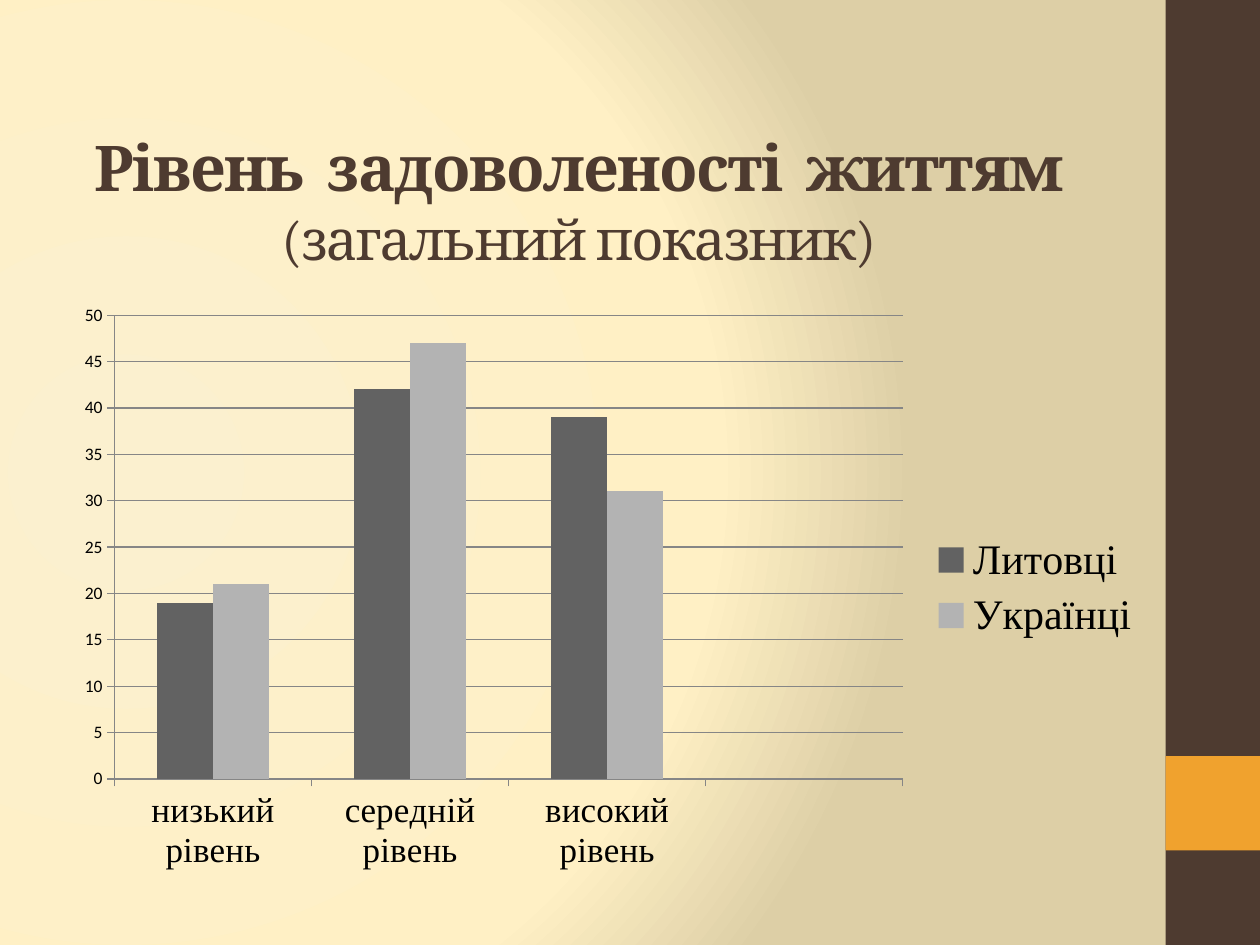
import lxml.etree
import pptx
import pptx.chart.data
import pptx.dml.color
import pptx.enum.chart
import pptx.enum.shapes
import pptx.enum.text
import pptx.oxml.ns
import pptx.util
from pptx.util import Inches

COLORS = {
    "brown": "4E3B30",
    "orange": "F0A22E",
    "dark_bar": "626262",
    "light_bar": "B3B3B3",
    "axis": "868686",
    "text": "000000",
}
BACKGROUND_STOPS = [(0, "FBF0CF"), (75, "FFF0C5"), (100, "DDCFA6")]
BACKGROUND_FOCUS = {"l": 20, "t": 50, "r": 100, "b": 50}
CATEGORIES = ["низький рівень", "середній рівень", "високий рівень", ""]
SERIES = [
    ("Литовці", (19, 42, 39, None), "dark_bar"),
    ("Українці", (21, 47, 31, None), "light_bar"),
]


def rgb(name):
    return pptx.dml.color.RGBColor.from_string(COLORS[name])


def add_xml(parent, tag, **attributes):
    element = lxml.etree.SubElement(parent, pptx.oxml.ns.qn(tag))
    for key, value in attributes.items():
        element.set(key, str(value))
    return element


class SlideBuilder:
    def __init__(self, slide):
        self.slide = slide
        self.title_font = "Cambria"
        self.label_font = "Times New Roman"
        self.number_font = "Calibri"

    def style_font(self, font, name, size, color="text", bold=False):
        font.name = name
        font.size = pptx.util.Pt(size)
        font.bold = bold
        font.color.rgb = rgb(color)

    def radial_background(self, stops, focus):
        self.slide.background.fill.gradient()
        gradient = self.slide.element.find(".//" + pptx.oxml.ns.qn("a:gradFill"))
        for child in list(gradient):
            gradient.remove(child)
        stop_list = add_xml(gradient, "a:gsLst")
        for position, color in stops:
            stop = add_xml(stop_list, "a:gs", pos=position * 1000)
            add_xml(stop, "a:srgbClr", val=color)
        circle = add_xml(gradient, "a:path", path="circle")
        edges = {edge: percent * 1000 for edge, percent in focus.items()}
        add_xml(circle, "a:fillToRect", **edges)

    def rectangle(self, left, top, width, height, color):
        shape = self.slide.shapes.add_shape(
            pptx.enum.shapes.MSO_SHAPE.RECTANGLE,
            Inches(left), Inches(top), Inches(width), Inches(height))
        shape.shadow.inherit = False
        shape.fill.solid()
        shape.fill.fore_color.rgb = rgb(color)
        shape.line.fill.background()

    def title(self, left, top, width, height, heading, subheading):
        box = self.slide.shapes.add_textbox(
            Inches(left), Inches(top), Inches(width), Inches(height))
        text_frame = box.text_frame
        text_frame.word_wrap = True
        text_frame.vertical_anchor = pptx.enum.text.MSO_ANCHOR.MIDDLE
        paragraph = text_frame.paragraphs[0]
        paragraph.text = f"{heading}\v{subheading}"
        paragraph.alignment = pptx.enum.text.PP_ALIGN.CENTER
        for run, size, bold in zip(paragraph.runs, (36, 32), (True, False)):
            self.style_font(run.font, self.title_font, size, "brown", bold)
            run.font.element.set("spc", "-100") if hasattr(run.font, "element") else \
                run.font._element.set("spc", "-100")

    def column_chart(self, left, top, width, height, categories, series):
        data = pptx.chart.data.CategoryChartData()
        data.categories = categories
        for name, values, _ in series:
            data.add_series(name, values)
        chart = self.slide.shapes.add_chart(
            pptx.enum.chart.XL_CHART_TYPE.COLUMN_CLUSTERED,
            Inches(left), Inches(top), Inches(width), Inches(height), data).chart
        self.style_font(chart.font, self.number_font, 10)
        chart.has_title = False

        plot = chart.plots[0]
        plot.gap_width = 150
        plot.overlap = 0
        plot.vary_by_categories = False
        for columns, (_, _, color) in zip(plot.series, series):
            columns.format.fill.solid()
            columns.format.fill.fore_color.rgb = rgb(color)

        value_axis = chart.value_axis
        value_axis.minimum_scale = 0
        value_axis.maximum_scale = 50
        value_axis.major_unit = 5
        value_axis.has_major_gridlines = True
        for axis in (value_axis, chart.category_axis):
            axis.major_tick_mark = pptx.enum.chart.XL_TICK_MARK.OUTSIDE
        for lines in (value_axis, chart.category_axis, value_axis.major_gridlines):
            lines.format.line.color.rgb = rgb("axis")
            lines.format.line.width = pptx.util.Pt(0.75)
        self.style_font(chart.category_axis.tick_labels.font, self.label_font, 20)

        chart.has_legend = True
        chart.legend.position = pptx.enum.chart.XL_LEGEND_POSITION.RIGHT
        chart.legend.include_in_layout = False
        self.style_font(chart.legend.font, self.label_font, 24)


def main():
    presentation = pptx.Presentation()
    presentation.slide_width = Inches(10)
    presentation.slide_height = Inches(7.5)
    builder = SlideBuilder(presentation.slides.add_slide(presentation.slide_layouts[6]))
    builder.radial_background(BACKGROUND_STOPS, BACKGROUND_FOCUS)
    builder.rectangle(9.25, 0, 0.75, 7.5, "brown")
    builder.rectangle(9.25, 6, 0.75, 0.75, "orange")
    builder.title(0.43, 0.84, 8.33, 1.5,
                  "Рівень  задоволеності  життям", "(загальний показник)")
    builder.column_chart(0.5, 2.33, 8.67, 4.67, CATEGORIES, SERIES)
    presentation.save("out.pptx")


if __name__ == "__main__":
    main()
